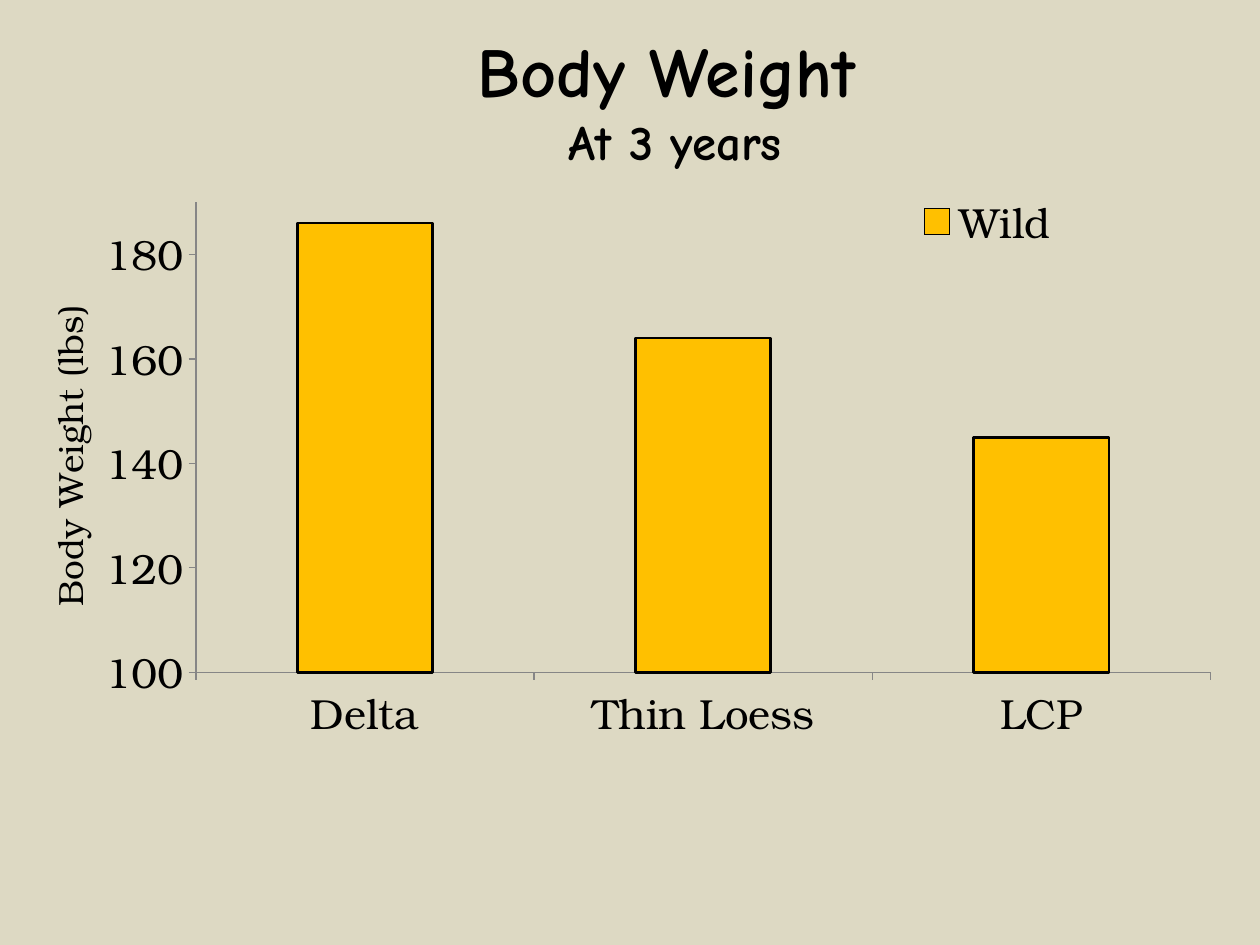
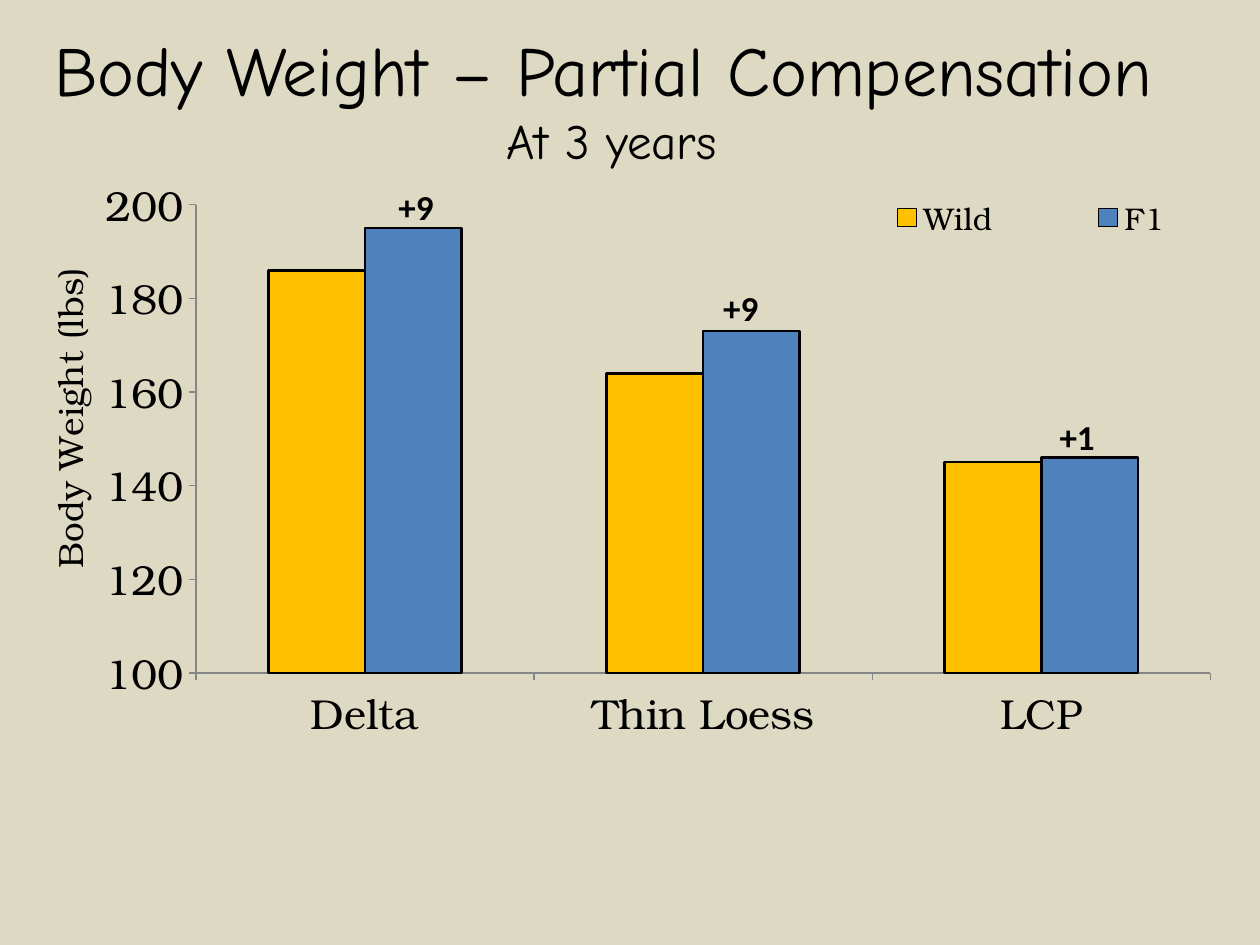
import lxml.etree
import pptx
import pptx.chart.data
import pptx.dml.color
import pptx.enum.chart
import pptx.enum.text
import pptx.oxml.ns
import pptx.util

Cm = pptx.util.Cm
Pt = pptx.util.Pt
ALIGN = pptx.enum.text.PP_ALIGN
TICK = pptx.enum.chart.XL_TICK_MARK

REGIONS = ["Delta", "Thin Loess", "LCP"]
WILD = ("Wild", (186, 164, 145), "FFC000")
F1 = ("F1", (195, 173, 146), "4F81BD")


def color(value):
    return pptx.dml.color.RGBColor.from_string(value)


def apply(target, formats):
    for name, value in formats.items():
        setattr(target, name, value)


def set_layout(element, index, target=None, **fractions):
    for old in element.findall(pptx.oxml.ns.qn("c:layout")):
        element.remove(old)
    layout = lxml.etree.Element(pptx.oxml.ns.qn("c:layout"))
    manual = lxml.etree.SubElement(layout, pptx.oxml.ns.qn("c:manualLayout"))
    values = {"layoutTarget": target} if target else {}
    values.update({"xMode": "edge", "yMode": "edge"}, **fractions)
    for name, value in values.items():
        child = lxml.etree.SubElement(manual, pptx.oxml.ns.qn(f"c:{name}"))
        child.set("val", str(value))
    element.insert(index, layout)


class Deck:
    background = "DDD9C3"
    ink = "000000"
    axis_gray = "868686"
    title_font = "Comic Neue"
    chart_font = "TeX Gyre Bonum"
    label_font = "Calibri"

    def __init__(self):
        self.presentation = pptx.Presentation()
        apply(self.presentation, {"slide_width": Cm(25.4), "slide_height": Cm(19.05)})
        self.slide = None

    def new_slide(self):
        self.slide = self.presentation.slides.add_slide(self.presentation.slide_layouts[6])
        fill = self.slide.background.fill
        fill.solid()
        fill.fore_color.rgb = color(self.background)

    def style_font(self, font, name, size, bold=False):
        apply(font, {"name": name, "size": Pt(size), "bold": bold})
        font.color.rgb = color(self.ink)

    def text(self, box, lines, name, bold, alignment, wrap):
        shape = self.slide.shapes.add_textbox(*map(Cm, box))
        frame = shape.text_frame
        frame.word_wrap = wrap
        for index, (words, size) in enumerate(lines):
            paragraph = frame.add_paragraph() if index else frame.paragraphs[0]
            paragraph.alignment = alignment
            run = paragraph.add_run()
            run.text = words
            self.style_font(run.font, name, size, bold)

    def title(self, left, top, words, bold):
        lines = [(words, 40), (" At 3 years", 28)]
        self.text((left, top, 24.33, 2.54), lines, self.title_font, bold, ALIGN.CENTER, False)

    def gain_label(self, left, top, width, words, alignment=ALIGN.LEFT):
        self.text((left, top, width, 1.12), [(words, 20)], self.label_font, True, alignment, True)

    def style_axis(self, axis):
        apply(axis, {"has_major_gridlines": False, "major_tick_mark": TICK.OUTSIDE,
                     "minor_tick_mark": TICK.NONE})
        self.style_font(axis.tick_labels.font, self.chart_font, 24)
        axis.format.line.color.rgb = color(self.axis_gray)
        axis.format.line.width = Pt(0.75)

    def weight_chart(self, series_list, maximum, axis_title_top, legend_size, legend_place):
        data = pptx.chart.data.CategoryChartData(number_format="0")
        data.categories = REGIONS
        for name, values, _ in series_list:
            data.add_series(name, values)
        chart = self.slide.shapes.add_chart(
            pptx.enum.chart.XL_CHART_TYPE.COLUMN_CLUSTERED,
            Cm(0.46), Cm(3.56), Cm(24.94), Cm(12.98), data).chart
        apply(chart, {"has_title": False, "has_legend": True})
        self.style_font(chart.font, self.chart_font, 10)

        plot = chart.plots[0]
        apply(plot, {"gap_width": 150, "overlap": 0, "vary_by_categories": False})
        for series, (_, _, fill_color) in zip(plot.series, series_list):
            series.format.fill.solid()
            series.format.fill.fore_color.rgb = color(fill_color)
            series.format.line.color.rgb = color(self.ink)
            series.format.line.width = Pt(1.5)
        plot_area = chart.element.find(".//" + pptx.oxml.ns.qn("c:plotArea"))
        set_layout(plot_area, 0, "inner", x=0.14, y=0.04, w=0.82, h=0.73)

        self.style_axis(chart.category_axis)
        weight_axis = chart.value_axis
        self.style_axis(weight_axis)
        apply(weight_axis, {"minimum_scale": 100, "maximum_scale": maximum, "major_unit": 20})
        apply(weight_axis.tick_labels, {"number_format": "0", "number_format_is_linked": False})
        axis_title = weight_axis.axis_title
        run = axis_title.text_frame.paragraphs[0].add_run()
        run.text = "Body Weight (lbs)"
        self.style_font(run.font, self.chart_font, 20)
        title_element = plot_area.find(".//" + pptx.oxml.ns.qn("c:title"))
        set_layout(title_element, 1, x=0.01, y=axis_title_top)

        legend = chart.legend
        apply(legend, {"position": pptx.enum.chart.XL_LEGEND_POSITION.RIGHT,
                       "include_in_layout": False})
        self.style_font(legend.font, self.chart_font, legend_size)
        legend_element = chart.element.find(".//" + pptx.oxml.ns.qn("c:legend"))
        set_layout(legend_element, 1, **legend_place)


def main():
    deck = Deck()

    deck.new_slide()
    deck.weight_chart([WILD], 190, 0.19, 24, {"x": 0.63, "y": 0.02, "w": 0.3, "h": 0.1})
    deck.title(1.27, 0.43, "Body Weight", True)

    deck.new_slide()
    deck.weight_chart([WILD, F1], 200, 0.13, 18, {"x": 0.63, "y": 0.01, "w": 0.37, "h": 0.1})
    deck.title(0, 0.41, "Body Weight – Partial Compensation", False)
    deck.gain_label(21.11, 8.26, 2.59, "+1")
    deck.gain_label(14.33, 5.66, 2.41, "+9")
    deck.gain_label(6.55, 3.61, 2.44, "+9", ALIGN.RIGHT)

    deck.presentation.save("out.pptx")


if __name__ == "__main__":
    main()
